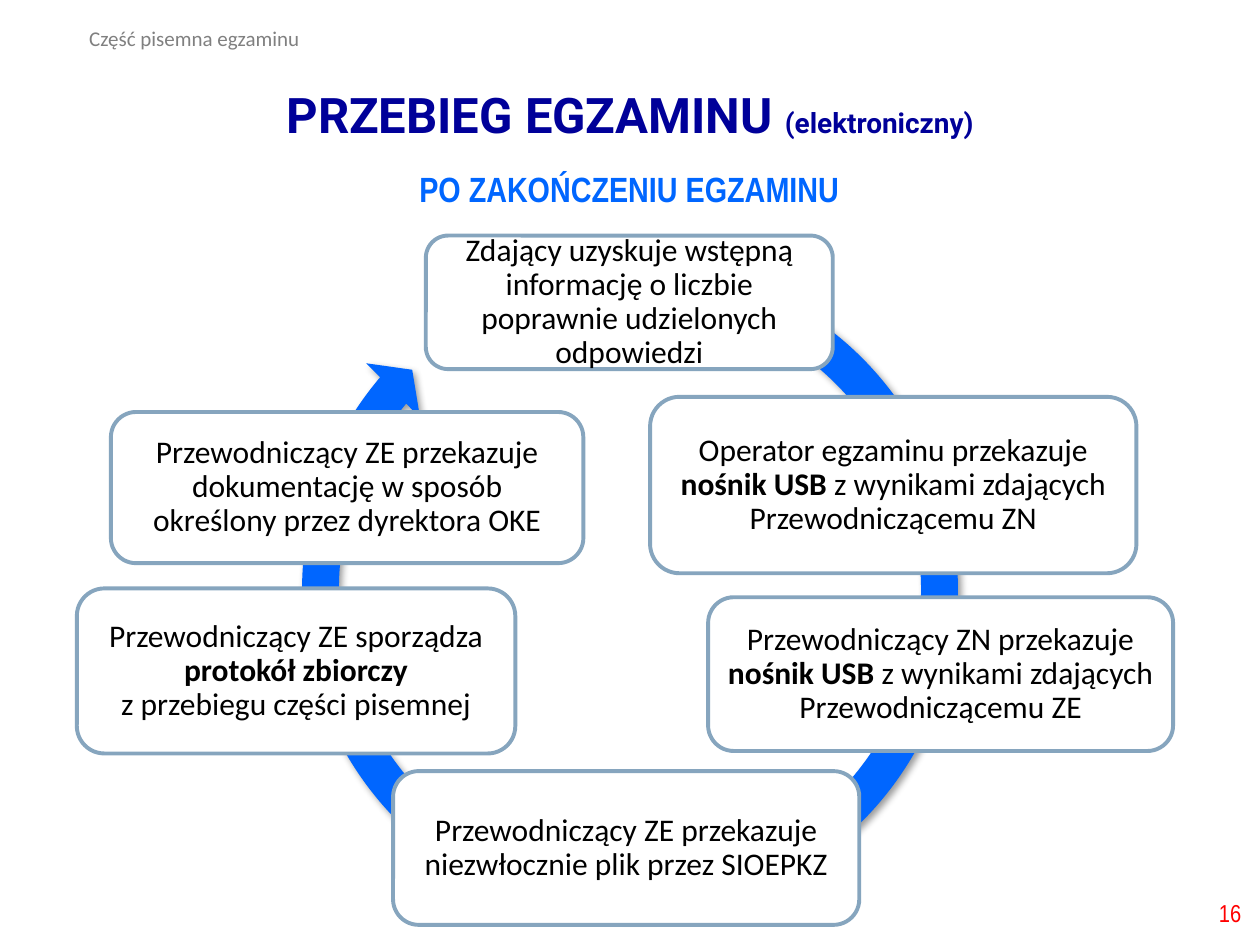
from lxml import etree
from pptx import Presentation
from pptx.dml.color import RGBColor
from pptx.enum.shapes import MSO_SHAPE as Shape
from pptx.enum.text import MSO_ANCHOR as Anchor, MSO_AUTO_SIZE as AutoSize, PP_ALIGN as Align
from pptx.oxml.ns import nsdecls
from pptx.util import Inches, Pt


def color(hex_value):
    return RGBColor.from_string(hex_value)


def write(shape, runs, font_name, hex_value, align=Align.CENTER, anchor=Anchor.MIDDLE, spacing=0.9):
    """Fill the shape with one paragraph of (text, size, bold) runs; a text of "\\n" breaks the line."""
    frame = shape.text_frame
    frame.word_wrap = True
    frame.auto_size = AutoSize.NONE
    frame.vertical_anchor = anchor
    paragraph = frame.paragraphs[0]
    paragraph.alignment = align
    paragraph.line_spacing = spacing
    for text, size, bold in runs:
        if text == "\n":
            paragraph.add_line_break()
            continue
        run = paragraph.add_run()
        run.text = text
        run.font.color.rgb = color(hex_value)
        for name, value in {"name": font_name, "size": Pt(size), "bold": bold}.items():
            setattr(run.font, name, value)


presentation = Presentation()
presentation.slide_width = Inches(10)
presentation.slide_height = Inches(7.5)
slide = presentation.slides.add_slide(presentation.slide_layouts[5])

title = slide.shapes.title
for name, value in {"left": 0.69, "top": 0.63, "width": 8.62, "height": 0.6}.items():
    setattr(title, name, Inches(value))
write(title, [("PRZEBIEG EGZAMINU ", 28, True), ("(elektroniczny)", 16, True)], "Roboto", "000099")

# Ring behind the steps
ring = slide.shapes.add_shape(
    Shape.CIRCULAR_ARROW, Inches(2.24), Inches(1.92), Inches(5.52), Inches(5.52))
for index, value in enumerate([0.053, 3.126, 132.038, 177.566, 0.055]):
    ring.adjustments[index] = value
ring.fill.solid()
ring.fill.fore_color.rgb = color("0066FF")
ring.line.fill.background()
ring._element.spPr.append(etree.fromstring(
    f'<a:effectLst {nsdecls("a")}>'
    '<a:outerShdw blurRad="50800" dist="38100" dir="2700000" algn="tl" rotWithShape="0">'
    '<a:srgbClr val="000000"><a:alpha val="40000"/></a:srgbClr>'
    '</a:outerShdw></a:effectLst>'))

# Steps: left, top, width, height, (text, bold) parts
steps = [
    (3.38, 1.87, 3.23, 1.06,
     [("Zdający uzyskuje wstępną informację o liczbie poprawnie udzielonych odpowiedzi", False)]),
    (5.16, 3.15, 3.86, 1.4,
     [("Operator egzaminu przekazuje ", False), ("nośnik USB ", True),
      ("z wynikami zdających Przewodniczącemu ZN", False)]),
    (0.61, 4.67, 3.48, 1.31,
     [("Przewodniczący ZE sporządza ", False), ("protokół zbiorczy", True), ("\n", False),
      ("z przebiegu części pisemnej", False)]),
    (3.12, 6.12, 3.7, 1.22,
     [("Przewodniczący ZE przekazuje niezwłocznie plik przez SIOEPKZ", False)]),
    (0.88, 3.27, 3.75, 1.2,
     [("Przewodniczący ZE przekazuje dokumentację w sposób określony przez dyrektora OKE", False)]),
    (5.62, 4.74, 3.69, 1.22,
     [("Przewodniczący ZN przekazuje ", False), ("nośnik USB ", True),
      ("z wynikami zdających Przewodniczącemu ZE", False)]),
]
for *box, parts in steps:
    step = slide.shapes.add_shape(Shape.ROUNDED_RECTANGLE, *map(Inches, box))
    step.shadow.inherit = False
    step.fill.solid()
    step.fill.fore_color.rgb = color("FFFFFF")
    step.line.color.rgb = color("86A5BE")
    step.line.width = Pt(2.25)
    for side in ("left", "top", "right", "bottom"):
        setattr(step.text_frame, f"margin_{side}", Inches(0.07))
    write(step, [(text, 18, bold) for text, bold in parts], "Calibri", "000000")

# Subtitle, section label and page number
labels = [
    (2.38, 1.21, 5.23, 0.61, "PO ZAKOŃCZENIU EGZAMINU", 20, True,
     "Arial Narrow", "0066FF", Align.CENTER, Anchor.MIDDLE, 0.9),
    (0.61, 0.15, 2.67, 0.3, "Część pisemna egzaminu", 12, False,
     "Calibri", "808080", Align.LEFT, Anchor.TOP, 1.0),
    (7.7, 7.04, 2.25, 0.4, "16", 14, False,
     "Arial Narrow", "FF0000", Align.RIGHT, Anchor.MIDDLE, 1.0),
]
for left, top, width, height, text, size, bold, *style in labels:
    label = slide.shapes.add_textbox(Inches(left), Inches(top), Inches(width), Inches(height))
    write(label, [(text, size, bold)], *style)

presentation.save("out.pptx")
